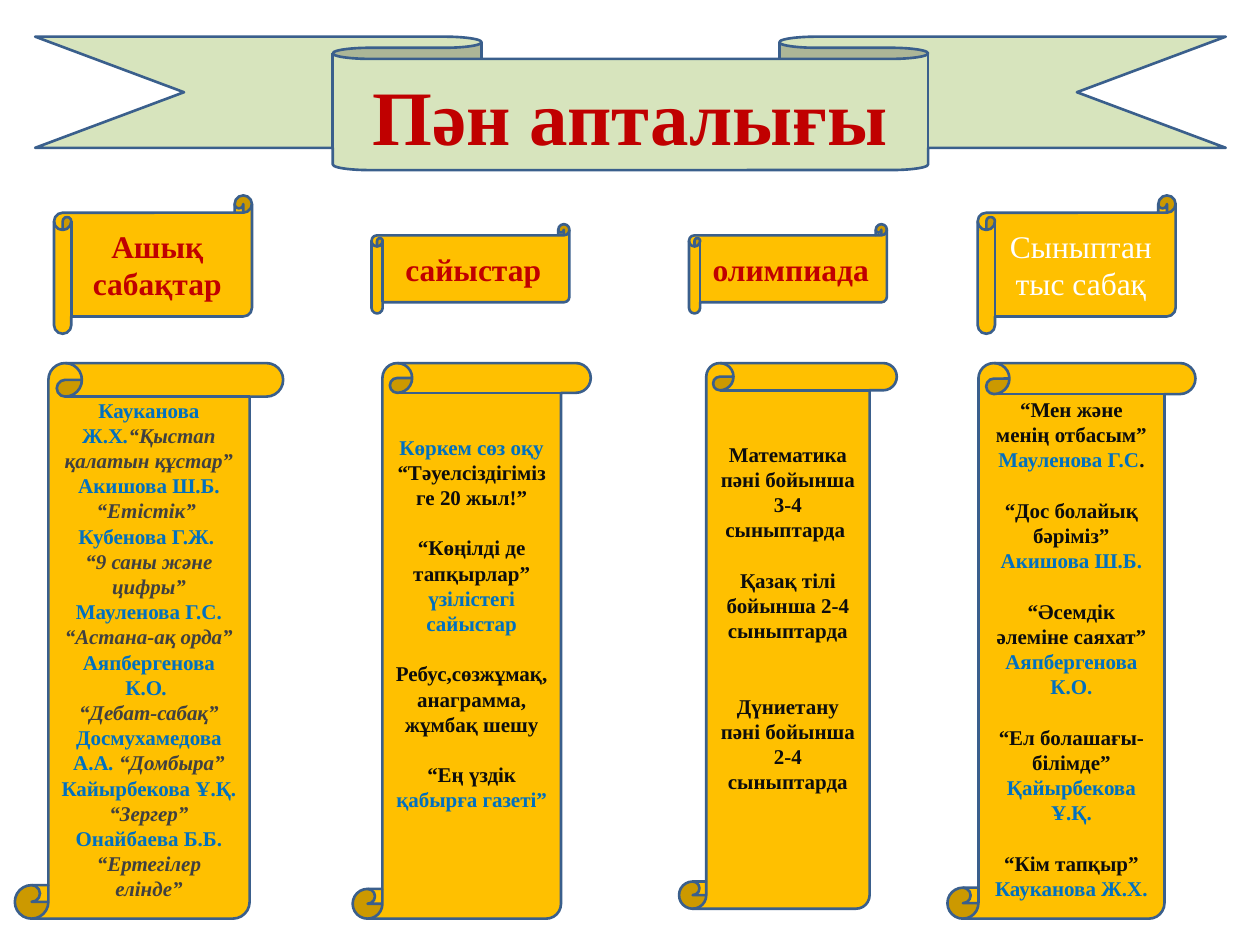
"""Build the subject week slide: a ribbon title over four headed scrolls."""
from pptx import Presentation
from pptx.dml.color import RGBColor
from pptx.enum.shapes import MSO_SHAPE
from pptx.enum.text import MSO_ANCHOR, PP_ALIGN
from pptx.util import Cm, Pt

RIBBON = MSO_SHAPE.DOWN_RIBBON
HEADER = MSO_SHAPE.HORIZONTAL_SCROLL
SCROLL = MSO_SHAPE.VERTICAL_SCROLL
MIDDLE = MSO_ANCHOR.MIDDLE
CENTER = PP_ALIGN.CENTER

GREEN = RGBColor(0xD7, 0xE4, 0xBD)
AMBER = RGBColor(0xFF, 0xC0, 0x00)
OUTLINE = RGBColor(0x3A, 0x5F, 0x8C)
RED = RGBColor(0xC0, 0x00, 0x00)
WHITE = RGBColor(0xFF, 0xFF, 0xFF)
BLUE = RGBColor(0x00, 0x70, 0xC0)
GREY = RGBColor(0x40, 0x40, 0x40)
BLACK = RGBColor(0x0D, 0x0D, 0x0D)

FONT = "Times New Roman"
BLANK_LINE = 14.4
TITLE = {"size": Pt(44), "bold": True, "color": RED}
HEAD = {"size": Pt(18), "bold": True, "color": RED}
HEAD_WHITE = {"size": Pt(18), "bold": False, "color": WHITE}
NAME = {"size": Pt(12), "bold": True, "color": BLUE}
NAME_ITALIC = {**NAME, "italic": True}
TOPIC = {**NAME_ITALIC, "color": GREY}
BODY = {**NAME, "color": BLACK}

HEADERS = [
    (1.09, 3.94, 2.79, "Ашық сабақтар", HEAD),
    (7.49, 4.52, 1.8, "сайыстар", HEAD),
    (13.89, 4.52, 1.8, "олимпиада", HEAD),
    (19.71, 3.94, 2.79, "Сыныптан тыс сабақ", HEAD_WHITE),
]

OPEN_LESSONS = [
    (0, [("Кауканова Ж.Х", NAME), (".", NAME_ITALIC), ("“Қыстап қалатын құстар”", TOPIC)]),
    (0, [("Акишова Ш.Б. ", NAME), ("“Етістік” ", TOPIC)]),
    (0, [("Кубенова Г.Ж. ", NAME)]),
    (0, [("“9 саны және цифры”", TOPIC)]),
    (0, [("Мауленова Г.С. ", NAME), ("“Астана-ақ орда”", TOPIC)]),
    (0, [("Аяпбергенова К.О", NAME), (". ", NAME_ITALIC)]),
    (0, [("“Дебат-сабақ”", TOPIC)]),
    (0, [("Досмухамедова А.А", NAME), (".", NAME_ITALIC), (" “Домбыра” ", TOPIC),
         ("Кайырбекова Ұ.Қ.", NAME)]),
    (0, [("“Зергер”", TOPIC)]),
    (0, [("Онайбаева Б.Б.", NAME)]),
    (0, [("“Ертегілер елінде”", TOPIC)]),
]
CONTESTS = [
    (0, [("Көркем сөз оқу ", NAME), ("“Тәуелсіздігімізге 20 жыл!”", BODY)]),
    (1, [("“Көңілді де тапқырлар” ", BODY), ("үзілістегі сайыстар", NAME)]),
    (1, [("Ребус,сөзжұмақ, анаграмма,", BODY)]),
    (0, [("жұмбақ шешу", BODY)]),
    (1, [("“Ең үздік ", BODY), ("қабырға газеті”", NAME)]),
]
OLYMPIADS = [
    (0, [("Математика пәні бойынша 3-4 сыныптарда ", BODY)]),
    (1, [("Қазақ тілі бойынша 2-4 сыныптарда", BODY)]),
    (2, [("Дүниетану пәні бойынша 2-4 сыныптарда", BODY)]),
]
AFTER_CLASS = [
    (0, [("“Мен және менің отбасым” ", BODY), ("Мауленова Г.С", NAME), (".", BODY)]),
    (1, [("“Дос болайық бәріміз” ", BODY), ("Акишова Ш.Б.", NAME)]),
    (1, [("“Әсемдік әлеміне саяхат”", BODY)]),
    (0, [("Аяпбергенова К.О.", NAME)]),
    (1, [("“Ел болашағы- білімде” ", BODY), ("Қайырбекова Ұ.Қ.", NAME)]),
    (1, [("“Кім тапқыр”", BODY)]),
    (0, [("Кауканова Ж.Х.", NAME)]),
]
COLUMNS = [
    (0.3, 5.41, 11.2, OPEN_LESSONS, 0.13),
    (7.11, 4.8, 11.2, CONTESTS, 1.14),
    (13.69, 4.39, 11, OLYMPIADS, 1.14),
    (19.1, 5, 11.2, AFTER_CLASS, 0.13),
]


class SlideBuilder:
    def __init__(self, slide):
        self.s = slide
        self.line_width = Pt(1.5)

    def shape(self, kind, box, fill):
        sp = self.s.shapes.add_shape(kind, *(Cm(v) for v in box))
        sp.shadow.inherit = False
        sp.fill.solid()
        sp.fill.fore_color.rgb = fill
        sp.line.color.rgb = OUTLINE
        sp.line.width = self.line_width
        return sp

    def run(self, p, text, style):
        r = p.add_run()
        r.text = text
        r.font.name = FONT
        for key, value in style.items():
            if key == "color":
                r.font.color.rgb = value
            else:
                setattr(r.font, key, value)

    def text(self, sp, paragraphs, bottom=0.13):
        tf = sp.text_frame
        frame = {"word_wrap": True, "vertical_anchor": MIDDLE, "margin_bottom": Cm(bottom)}
        for key, value in frame.items():
            setattr(tf, key, value)
        for i, (blank_lines, runs) in enumerate(paragraphs):
            p = tf.add_paragraph() if i else tf.paragraphs[0]
            p.alignment = CENTER
            p.space_before = Pt(blank_lines * BLANK_LINE)
            for text, style in runs:
                self.run(p, text, style)

    def ribbon(self, box, text):
        self.text(self.shape(RIBBON, box, GREEN), [(0, [(text, TITLE)])])

    def header(self, left, top, height, text, style):
        sp = self.shape(HEADER, (left, top, 3.99, height), AMBER)
        self.text(sp, [(0, [(text, style)])])

    def column(self, left, width, height, paragraphs, bottom):
        sp = self.shape(SCROLL, (left, 7.32, width, height), AMBER)
        self.text(sp, paragraphs, bottom)


def main():
    prs = Presentation()
    prs.slide_width, prs.slide_height = Cm(25.4), Cm(19.05)
    builder = SlideBuilder(prs.slides.add_slide(prs.slide_layouts[6]))
    builder.ribbon((0.71, 0.74, 24, 2.69), "Пән апталығы")
    for column in COLUMNS:
        builder.column(*column)
    for header in HEADERS:
        builder.header(*header)
    prs.save("out.pptx")


if __name__ == "__main__":
    main()
